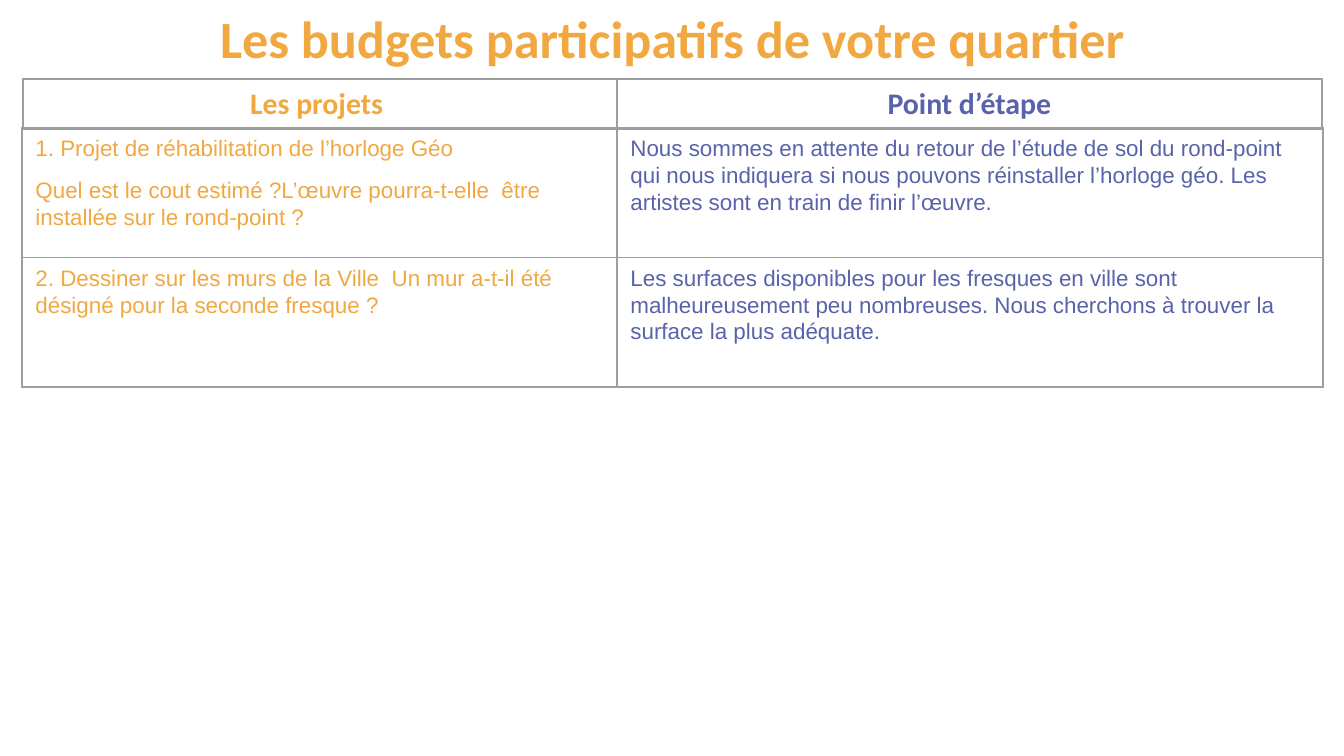
from lxml.etree import SubElement
from pptx import Presentation
from pptx.dml.color import RGBColor
from pptx.enum.text import MSO_ANCHOR, PP_ALIGN
from pptx.oxml.ns import qn
from pptx.util import Emu, Pt

SLIDE_W, SLIDE_H = 1344, 756
SCALE = 9144000 / SLIDE_W
COLORS = {"orange": "F2A841", "blue": "5963AB", "border": "9E9E9E"}
COLUMN_COLORS = ("orange", "blue")

HEADINGS = [(["Les projets "], ["Point d’étape"])]
PROJECTS = [
    (
        [
            "1. Projet de réhabilitation de l’horloge Géo",
            "Quel est le cout estimé ?L’œuvre pourra-t-elle  être installée sur le rond-point ?",
        ],
        [
            "Nous sommes en attente du retour de l’étude de sol du rond-point "
            "qui nous indiquera si nous pouvons réinstaller l’horloge géo. "
            "Les artistes sont en train de finir l’œuvre."
        ],
    ),
    (
        ["2. Dessiner sur les murs de la Ville  Un mur a-t-il été désigné pour la seconde fresque ?"],
        [
            "Les surfaces disponibles pour les fresques en ville sont "
            "malheureusement peu nombreuses. Nous cherchons à trouver la "
            "surface la plus adéquate."
        ],
    ),
]


def px(n):
    """Turn pixels into EMU."""
    return Emu(round(n * SCALE))


def set_font(p, name, size, color, bold=False):
    """Set the font of a whole paragraph."""
    p.font.name = name
    p.font.size = Pt(size)
    p.font.bold = bold
    p.font.color.rgb = RGBColor.from_string(COLORS[color])


def set_borders(cell):
    """Draw a thin line on the four sides of a cell."""
    tc_pr = cell._tc.get_or_add_tcPr()
    for i, side in enumerate(("a:lnL", "a:lnR", "a:lnT", "a:lnB")):
        ln = tc_pr.makeelement(qn(side), {"w": str(Pt(0.75))})
        fill = SubElement(ln, qn("a:solidFill"))
        SubElement(fill, qn("a:srgbClr"), val=COLORS["border"])
        tc_pr.insert(i, ln)


def add_title(s, x, y, w, h):
    """Place the centred slide title."""
    tf = s.shapes.add_textbox(px(x), px(y), px(w), px(h)).text_frame
    tf.word_wrap = True
    tf.vertical_anchor = MSO_ANCHOR.MIDDLE
    p = tf.paragraphs[0]
    p.text = "Les budgets participatifs de votre quartier"
    p.alignment = PP_ALIGN.CENTER
    set_font(p, "Calibri", 28, "orange", True)


def add_grid(s, x, y, w, h, split, rows, heading=False):
    """Place a two-column table whose first column is split px wide."""
    frame = s.shapes.add_table(len(rows), 2, px(x), px(y), px(w), px(h))
    table = frame.table
    table.first_row = table.horz_banding = False
    for col, width in zip(table.columns, (split, w - split)):
        col.width = px(width)
    for r, row in enumerate(rows):
        for c, texts in enumerate(row):
            cell = table.cell(r, c)
            cell.fill.background()
            set_borders(cell)
            cell.text = "\n".join(texts)
            for p in cell.text_frame.paragraphs:
                if heading:
                    p.alignment = PP_ALIGN.CENTER
                    set_font(p, "Calibri", 16, COLUMN_COLORS[c], True)
                else:
                    p.line_spacing = 1.07
                    p.space_after = Pt(8)
                    set_font(p, "Arial", 12, COLUMN_COLORS[c])


def main():
    """Build the slide and save it."""
    prs = Presentation()
    prs.slide_width, prs.slide_height = px(SLIDE_W), px(SLIDE_H)
    s = prs.slides.add_slide(prs.slide_layouts[6])
    add_grid(s, 23, 79, 1299, 50, 594, HEADINGS, heading=True)
    add_title(s, 44, -5, 1256, 85)
    add_grid(s, 22, 128, 1301, 259, 595, PROJECTS)
    prs.save("out.pptx")


if __name__ == "__main__":
    main()
